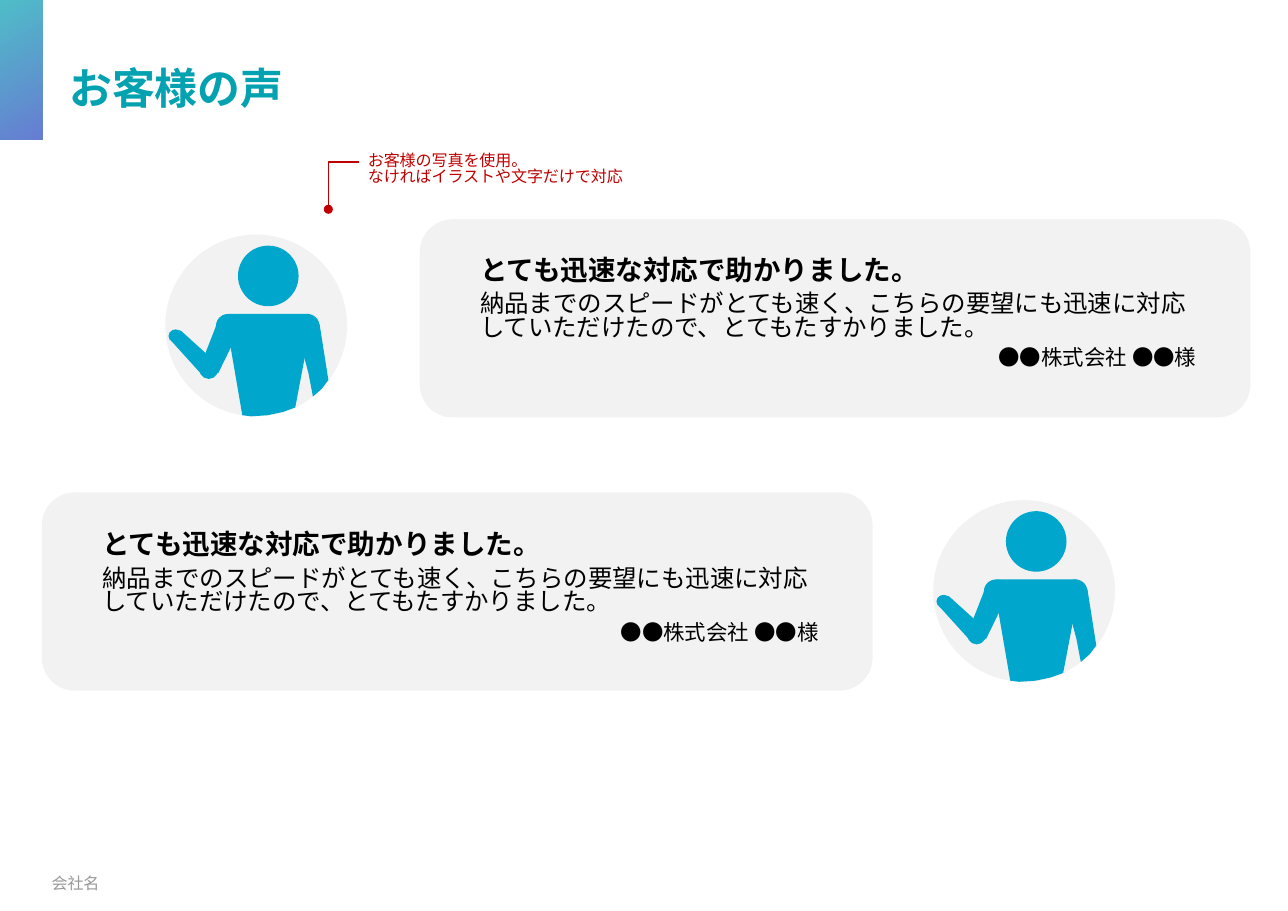
from dataclasses import dataclass

from lxml.etree import Element, SubElement
from pptx import Presentation
from pptx.dml.color import RGBColor
from pptx.enum.shapes import MSO_SHAPE
from pptx.enum.text import MSO_ANCHOR, PP_ALIGN
from pptx.oxml.ns import qn
from pptx.util import Inches, Pt

Point = tuple[float, float]
Box = tuple[float, float, float, float]


@dataclass(frozen=True)
class Theme:
    title: str = "04A2B1"
    accent_end: str = "2746C0"
    panel: str = "F2F2F2"
    person: str = "00A6CB"
    note: str = "C00000"
    footer: str = "989898"
    ink: str = "000000"
    font: str = "Noto Sans CJK JP"
    footer_font: str = "Calibri"
    title_size: float = 28
    heading_size: float = 18
    body_size: float = 16
    customer_size: float = 14
    small_size: float = 10.5
    line_spacing: float = 0.81
    paragraph_gap: float = 5.3


@dataclass(frozen=True)
class Line:
    text: str
    size: float
    color: str
    font: str
    bold: bool = False
    align: PP_ALIGN = PP_ALIGN.LEFT
    spacing: float = 1.0
    gap: float = 0


@dataclass(frozen=True)
class Testimonial:
    card: Point
    words: Point
    portrait: Point
    heading: str = "とても迅速な対応で助かりました。"
    comment: str = ("納品までのスピードがとても速く、こちらの要望にも迅速に対応"
                    "していただけたので、とてもたすかりました。")
    customer: str = "●●株式会社 ●●様"


THEME = Theme()
TESTIMONIALS = [
    Testimonial(card=(3.81, 1.99), words=(4.26, 2.28), portrait=(1.5, 2.13)),
    Testimonial(card=(0.38, 4.47), words=(0.83, 4.77), portrait=(8.47, 4.54)),
]

# Portrait parts, measured from the corner of its background circle
PORTRAIT_SIZE = 1.65
LIMBS: dict[str, list[Point]] = {
    "torso": [(1.3, 0.72), (0.58, 0.72), (0.46, 0.83), (0.58, 0.94), (0.7, 1.64),
              (0.78, 1.65), (0.93, 1.64), (1.07, 1.61), (1.18, 1.57),
              (1.3, 0.94), (1.4, 0.83)],
    "upper arm": [(0.48, 1.26), (0.32, 1.19), (0.48, 0.78), (0.67, 0.87)],
    "forearm": [(0.05, 0.96), (0.14, 0.87), (0.46, 1.16), (0.34, 1.28)],
    "lowered arm": [(1.3, 1.26), (1.34, 1.47), (1.42, 1.4), (1.48, 1.32),
                    (1.4, 0.81), (1.19, 0.85)],
}
JOINTS: dict[str, Box] = {
    "hand": (0.03, 0.86, 0.13, 0.12),
    "elbow": (0.31, 1.14, 0.17, 0.17),
    "raised shoulder": (0.46, 0.72, 0.22, 0.22),
    "lowered shoulder": (1.18, 0.72, 0.22, 0.22),
    "head": (0.66, 0.1, 0.55, 0.55),
}


def rgb(color: str) -> RGBColor:
    return RGBColor.from_string(color)


def paint(shape, color: str) -> None:
    shape.shadow.inherit = False
    shape.fill.solid()
    shape.fill.fore_color.rgb = rgb(color)
    shape.line.fill.background()


def add_panel(shapes, kind: MSO_SHAPE, box: Box, color: str):
    panel = shapes.add_shape(kind, *map(Inches, box))
    paint(panel, color)
    return panel


def add_outline(shapes, points: list[Point], closed: bool):
    corners = [(Inches(x), Inches(y)) for x, y in points]
    builder = shapes.build_freeform(*corners[0])
    builder.add_line_segments(corners[1:], close=closed)
    return builder.convert_to_shape()


def write(holder, lines: list[Line]) -> None:
    frame = holder.text_frame
    frame.word_wrap = True
    for number, line in enumerate(lines):
        paragraph = frame.add_paragraph() if number else frame.paragraphs[0]
        paragraph.text = line.text
        paragraph.alignment = line.align
        paragraph.line_spacing = line.spacing
        paragraph.space_after = Pt(line.gap)
        for run in paragraph.runs:
            run.font.size = Pt(line.size)
            run.font.bold = line.bold
            run.font.color.rgb = rgb(line.color)
            run.font.name = line.font
    # East Asian glyphs take the same typeface
    for latin in list(holder.element.iter(qn("a:latin"))):
        latin.addnext(Element(qn("a:ea"), typeface=latin.get("typeface")))


def add_words(slide, box: Box, lines: list[Line]):
    words = slide.shapes.add_textbox(*map(Inches, box))
    words.text_frame.margin_top = Inches(0.07)
    write(words, lines)
    return words


def passage(text: str, size: float, color: str, bold: bool = False,
            align: PP_ALIGN = PP_ALIGN.LEFT) -> Line:
    return Line(text, size, color, THEME.font, bold, align,
                THEME.line_spacing, THEME.paragraph_gap)


def add_portrait(slide, corner: Point) -> None:
    left, top = corner
    portrait = slide.shapes.add_group_shape().shapes
    add_panel(portrait, MSO_SHAPE.OVAL,
              (left, top, PORTRAIT_SIZE, PORTRAIT_SIZE), THEME.panel)
    for points in LIMBS.values():
        limb = add_outline(portrait, [(left + x, top + y) for x, y in points], True)
        paint(limb, THEME.person)
    for x, y, width, height in JOINTS.values():
        add_panel(portrait, MSO_SHAPE.OVAL,
                  (left + x, top + y, width, height), THEME.person)


def add_testimonial(slide, voice: Testimonial) -> None:
    add_panel(slide.shapes, MSO_SHAPE.ROUNDED_RECTANGLE,
              (*voice.card, 7.54, 1.8), THEME.panel)
    add_portrait(slide, voice.portrait)
    add_words(slide, (*voice.words, 6.7, 1.34), [
        passage(voice.heading, THEME.heading_size, THEME.ink, bold=True),
        passage(voice.comment, THEME.body_size, THEME.ink),
        passage(voice.customer, THEME.customer_size, THEME.ink, align=PP_ALIGN.RIGHT),
    ])


def add_accent(slide) -> None:
    accent = add_panel(slide.shapes, MSO_SHAPE.RECTANGLE, (0, 0, 0.39, 1.27), THEME.title)
    accent.fill.gradient()
    accent.fill.gradient_angle = 300
    for stop, color in zip(accent.fill.gradient_stops, (THEME.title, THEME.accent_end)):
        stop.color.rgb = rgb(color)
    for color in accent.element.iter(qn("a:srgbClr")):
        SubElement(color, qn("a:alpha"), val="70000")


def add_photo_note(slide) -> None:
    leader = add_outline(slide.shapes, [(3.26, 1.47), (2.98, 1.47), (2.98, 1.9)], False)
    leader.shadow.inherit = False
    leader.fill.background()
    leader.line.color.rgb = rgb(THEME.note)
    leader.line.width = Pt(1)
    for outline in leader.element.iter(qn("a:ln")):
        SubElement(outline, qn("a:tailEnd"), type="oval")
    add_words(slide, (3.24, 1.33, 3.52, 0.34), [
        passage("お客様の写真を使用。\nなければイラストや文字だけで対応",
                THEME.small_size, THEME.note)])


def main() -> None:
    deck = Presentation()
    deck.slide_width, deck.slide_height = Inches(11.69), Inches(8.27)
    slide = deck.slides.add_slide(deck.slide_layouts[5])

    # Title and accent
    add_accent(slide)
    title = slide.shapes.title
    title.left, title.top, title.width, title.height = map(Inches, (0.53, 0.47, 11.16, 0.6))
    title.text_frame.vertical_anchor = MSO_ANCHOR.MIDDLE
    write(title, [Line("お客様の声", THEME.title_size, THEME.title, THEME.font,
                       bold=True, spacing=1.1)])

    # Customer voices
    for voice in TESTIMONIALS:
        add_testimonial(slide, voice)
    add_photo_note(slide)

    # Footer
    company = add_words(slide, (0.37, 7.8, 3.45, 0.44), [
        Line("会社名", THEME.small_size, THEME.footer, THEME.footer_font)])
    company.text_frame.margin_top = Inches(0.05)
    company.text_frame.vertical_anchor = MSO_ANCHOR.MIDDLE

    deck.save("out.pptx")


if __name__ == "__main__":
    main()
